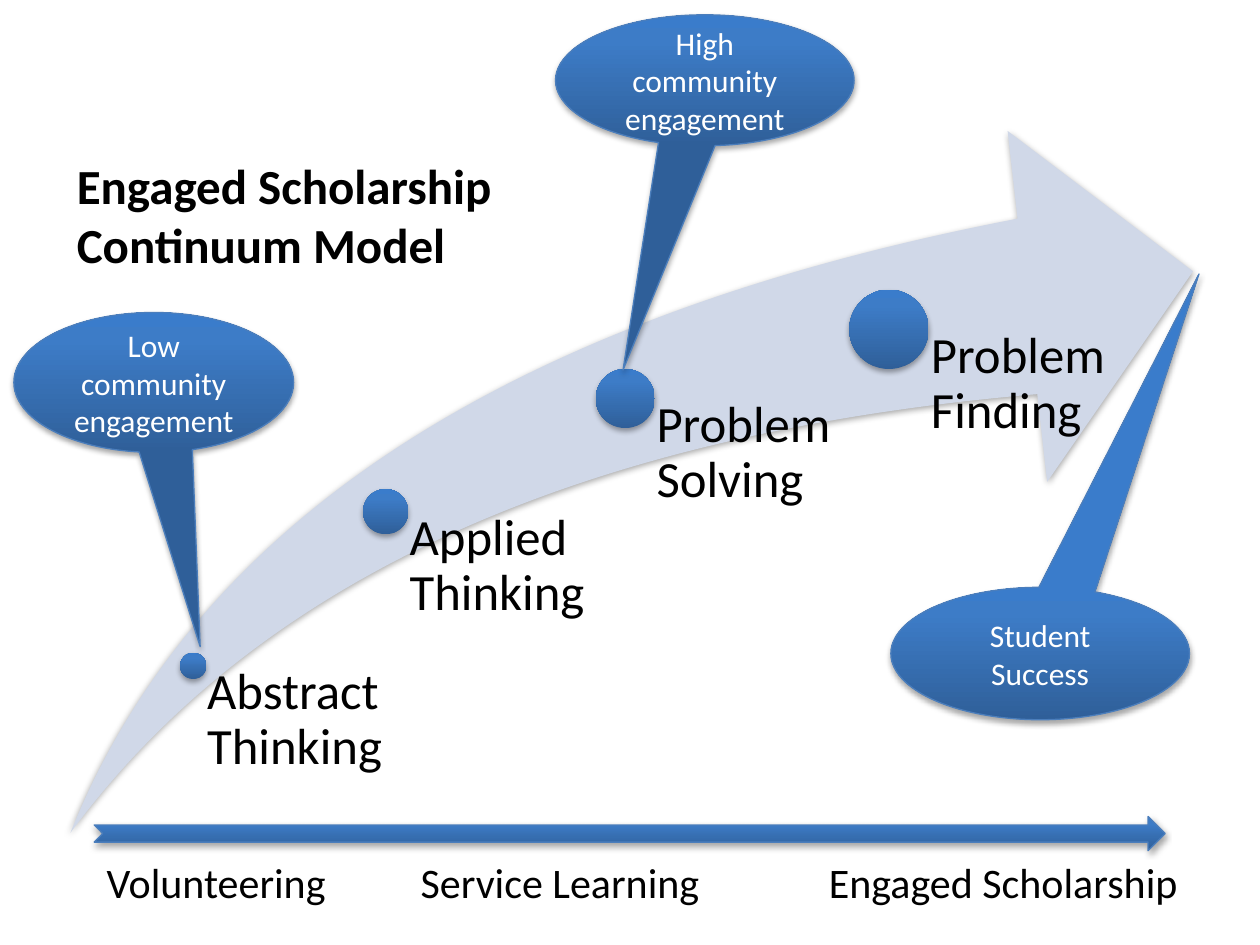
from dataclasses import dataclass
from lxml.etree import SubElement
from pptx import Presentation
from pptx.dml.color import RGBColor
from pptx.enum.shapes import MSO_SHAPE
from pptx.enum.text import MSO_ANCHOR, MSO_AUTO_SIZE, PP_ALIGN
from pptx.oxml.ns import qn
from pptx.util import Cm, Pt


@dataclass(frozen=True)
class Theme:
    font: str = "Calibri"
    ink: str = "000000"
    light: str = "FFFFFF"
    swoosh: str = "D0D8E8"
    outline: str = "4B7EBC"
    gradient: tuple = ((0, "2F5F99"), (80, "3D7CC7"), (100, "3A7CCB"))
    title_size: int = 28
    step_size: int = 29
    stage_size: int = 24
    callout_size: int = 18


theme = Theme()


def add_figure(preset, box, outlined=False, solid=None):
    figure = slide.shapes.add_shape(preset, *map(Cm, box))
    if solid:
        figure.fill.solid()
        figure.fill.fore_color.rgb = RGBColor.from_string(solid)
    else:
        figure.fill.gradient()
        figure.fill.gradient_angle = 90
        stops = figure.element.spPr.find(".//" + qn("a:gsLst"))
        stops.clear()
        for position, color in theme.gradient:
            stop = SubElement(stops, qn("a:gs"), pos=str(position * 1000))
            SubElement(stop, qn("a:srgbClr"), val=color)
    if outlined:
        figure.line.color.rgb = RGBColor.from_string(theme.outline)
        figure.line.width = Pt(0.75)
    else:
        figure.line.fill.background()
    figure.shadow.inherit = False
    effects = figure.element.spPr.find(qn("a:effectLst"))
    shadow = SubElement(effects, qn("a:outerShdw"), blurRad="40000",
                        dist="23000", dir="5400000", rotWithShape="0")
    shade = SubElement(shadow, qn("a:srgbClr"), val=theme.ink)
    SubElement(shade, qn("a:alpha"), val="35000")
    return figure


def write(frame, lines, size, color=theme.ink, bold=False, align=PP_ALIGN.LEFT):
    frame.word_wrap = True
    for index, line in enumerate(lines):
        paragraph = frame.add_paragraph() if index else frame.paragraphs[0]
        paragraph.alignment = align
        run = paragraph.add_run()
        run.text = line
        run.font.name = theme.font
        run.font.size = Pt(size)
        run.font.bold = bold
        run.font.color.rgb = RGBColor.from_string(color)


deck = Presentation()
deck.slide_width, deck.slide_height = Cm(25.4), Cm(19.05)
slide = deck.slides.add_slide(deck.slide_layouts[6])

swoosh_bottom = 16.79
swoosh = add_figure(MSO_SHAPE.SWOOSH_ARROW, (1.42, 2.64, 22.63, 14.15), solid=theme.swoosh)
swoosh.adjustments[0] = 0.25
swoosh.adjustments[1] = 0.25

steps = [
    ("Abstract Thinking", 3.63, 13.16, 0.53, 3.86),
    ("Applied Thinking", 7.32, 9.86, 0.91, 4.75),
    ("Problem Solving", 12.01, 7.44, 1.19, 4.75),
    ("Problem Finding", 17.12, 5.84, 1.6, 4.75),
]
for label, left, top, diameter, width in steps:
    add_figure(MSO_SHAPE.OVAL, (left, top, diameter, diameter))
    center_x, center_y = left + diameter / 2, top + diameter / 2
    step = slide.shapes.add_textbox(
        Cm(center_x), Cm(center_y), Cm(width), Cm(swoosh_bottom - center_y)).text_frame
    step.margin_left = Cm(diameter * 0.53)
    step.margin_top = step.margin_right = step.margin_bottom = 0
    write(step, [label], theme.step_size)
    step.paragraphs[0].line_spacing = 0.9

add_figure(MSO_SHAPE.NOTCHED_RIGHT_ARROW, (1.9, 16.46, 21.59, 0.69), outlined=True)

callouts = [
    (["Low community", "engagement"], (0.28, 6.3, 5.64, 2.82), (0.166, 1.889)),
    (["High", "community engagement"], (11.2, 0.3, 6.02, 2.64), (-0.274, 2.213)),
    (["Student Success"], (17.96, 11.84, 6.02, 2.67), (0.532, -2.866)),
]
for lines, box, tip in callouts:
    callout = add_figure(MSO_SHAPE.OVAL_CALLOUT, box, outlined=True)
    callout.adjustments[0], callout.adjustments[1] = tip
    callout.text_frame.vertical_anchor = MSO_ANCHOR.MIDDLE
    write(callout.text_frame, lines, theme.callout_size, theme.light, align=PP_ALIGN.CENTER)

captions = [
    ("Engaged Scholarship Continuum Model", (1.3, 3.02, 9.91, 2.64), theme.title_size, True),
    ("Volunteering", (1.9, 17.15, 5.26, 1.27), theme.stage_size, False),
    ("Service Learning", (8.23, 17.15, 6.43, 1.27), theme.stage_size, False),
    ("Engaged Scholarship", (16.46, 17.15, 7.67, 1.27), theme.stage_size, False),
]
for wording, box, size, bold in captions:
    caption = slide.shapes.add_textbox(*map(Cm, box)).text_frame
    write(caption, [wording], size, bold=bold)
    caption.auto_size = MSO_AUTO_SIZE.SHAPE_TO_FIT_TEXT

deck.save("out.pptx")
